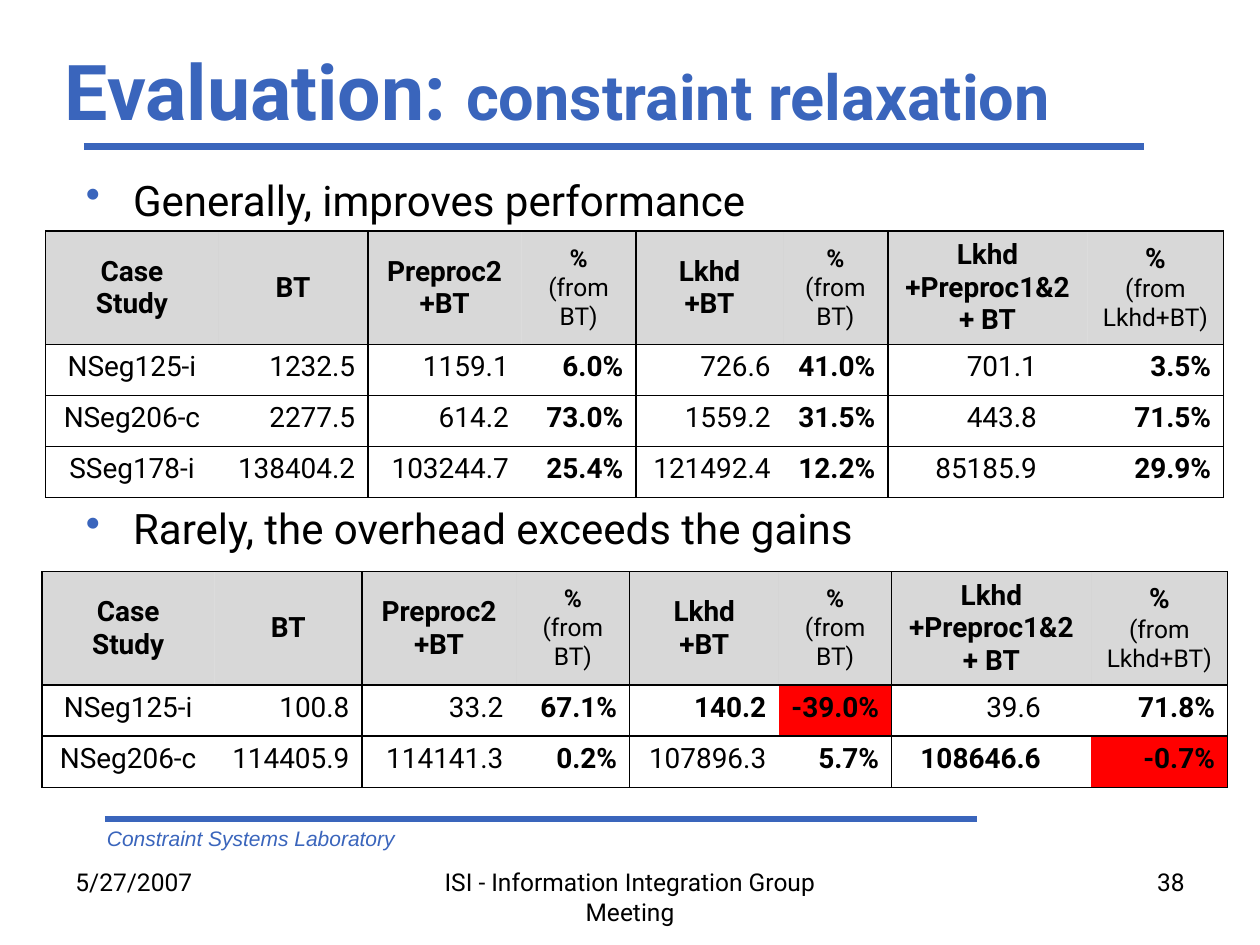
from dataclasses import dataclass

from lxml.etree import SubElement
from pptx import Presentation
from pptx.dml.color import RGBColor
from pptx.enum.shapes import MSO_CONNECTOR
from pptx.enum.text import MSO_ANCHOR, PP_ALIGN
from pptx.oxml.ns import qn
from pptx.util import Pt

HUES = {"blue": "3A65BC", "black": "000000", "grey": "B2B2B2", "red": "FF0000"}
LEFT, MID, RIGHT = PP_ALIGN.LEFT, PP_ALIGN.CENTER, PP_ALIGN.RIGHT
TALL, SHORT = 60, 29.2
HEADS = (
    ("Case", "Study"), ("BT",), ("Preproc2", "+BT"), ("%", "(from BT)"),
    ("Lkhd", "+BT"), ("%", "(from BT)"), ("Lkhd", "+Preproc1&2", "+ BT"),
    ("%", "(from Lkhd+BT)"),
)


@dataclass(frozen=True)
class Grid:
    left: float
    top: float
    cols: tuple[float, ...]
    rows: tuple[tuple[str, ...], ...]
    bold: tuple[str, ...] = ()


@dataclass(frozen=True)
class Rule:
    start: float
    end: float
    top: float


@dataclass(frozen=True)
class Note:
    text: str
    left: float
    top: float
    width: float
    height: float
    align: PP_ALIGN = LEFT
    size: float = 14
    font: str = "Roboto"
    hue: str = "black"
    italic: bool = False


RULES = (Rule(48, 654, 84), Rule(60, 558, 468))
NOTES = (
    Note("Constraint Systems Laboratory", 54, 468, 378, 21.6,
         size=12, font="Arial", hue="blue", italic=True),
    Note("5/27/2007", 36, 492, 168, 37.5),
    Note("ISI - Information Integration Group Meeting", 246, 492, 228, 37.5, MID),
    Note("38", 516, 492, 168, 37.5, RIGHT),
)
GRIDS = (
    Grid(26.2, 132, (98.5, 85.5, 87.8, 65.4, 84.2, 59.8, 114, 78), (
        ("NSeg125-i", "1232.5", "1159.1", "6.0%", "726.6", "41.0%", "701.1", "3.5%"),
        ("NSeg206-c", "2277.5", "614.2", "73.0%", "1559.2", "31.5%", "443.8", "71.5%"),
        ("SSeg178-i", "138404.2", "103244.7", "25.4%", "121492.4", "12.2%",
         "85185.9", "29.9%"),
    )),
    Grid(24, 326.6, (98.5, 84.4, 88, 65, 85.2, 64.5, 114, 78), (
        ("NSeg125-i", "100.8", "33.2", "67.1%", "140.2", "-39.0%", "39.6", "71.8%"),
        ("NSeg206-c", "114405.9", "114141.3", "0.2%", "107896.3", "5.7%",
         "108646.6", "-0.7%"),
    ), ("140.2", "108646.6")),
)


def write(para, text: str, *, size: float = 16, font: str = "Roboto",
          hue: str = "black", bold: bool = False, italic: bool = False,
          align: PP_ALIGN = LEFT) -> None:
    """Add a formatted run to a paragraph."""
    para.alignment = align
    run = para.add_run()
    run.text = text
    face = run.font
    face.size, face.name, face.bold, face.italic = Pt(size), font, bold, italic
    face.color.rgb = RGBColor.from_string(HUES[hue])


def frame(slide, left: float, top: float, width: float, height: float):
    """Add a wrapping text box and return its frame."""
    box = slide.shapes.add_textbox(Pt(left), Pt(top), Pt(width), Pt(height))
    box.text_frame.word_wrap = True
    return box.text_frame


def draw_rule(slide, rule: Rule) -> None:
    """Draw a horizontal blue rule."""
    line = slide.shapes.add_connector(
        MSO_CONNECTOR.STRAIGHT, Pt(rule.start), Pt(rule.top), Pt(rule.end), Pt(rule.top))
    line.line.width = Pt(4)
    line.line.color.rgb = RGBColor.from_string(HUES["blue"])
    SubElement(line._element.spPr, qn("a:effectLst"))


def draw_note(slide, note: Note) -> None:
    """Draw a single line of footer text."""
    body = frame(slide, note.left, note.top, note.width, note.height)
    write(body.paragraphs[0], note.text, size=note.size, font=note.font,
          hue=note.hue, italic=note.italic, align=note.align)


def draw_points(slide, points: tuple[str, ...], gap: float) -> None:
    """Draw bulleted points with a wide gap between them."""
    body = frame(slide, 42, 96, 642, 356)
    for num, point in enumerate(points):
        para = body.add_paragraph() if num else body.paragraphs[0]
        props = para._p.get_or_add_pPr()
        props.set("marL", str(Pt(27)))
        props.set("indent", str(-Pt(27)))
        tint = SubElement(props, qn("a:buClr"))
        SubElement(tint, qn("a:srgbClr"), val=HUES["blue"])
        SubElement(props, qn("a:buChar"), char="•")
        para.space_before = Pt(gap if num else 0)
        write(para, point, size=24)


def edge(cell, col: int, last: int) -> None:
    """Rule a cell above and below, and around each pair of columns."""
    props = cell._tc.get_or_add_tcPr()
    sides = {"L": col % 2 == 0, "R": col % 2 == 1 or col == last, "T": True, "B": True}
    for side, shown in sides.items():
        wide = 1 if side in "LR" and 0 < col < last else 0.75
        line = SubElement(props, qn(f"a:ln{side}"), w=str(Pt(wide)))
        fill = SubElement(line, qn("a:solidFill" if shown else "a:noFill"))
        if shown:
            SubElement(fill, qn("a:srgbClr"), val=HUES["black"])


def paint(cell, hue: str, alpha: int = 100) -> None:
    """Fill a cell with a colour at a given opacity in percent."""
    cell.fill.solid()
    cell.fill.fore_color.rgb = RGBColor.from_string(HUES[hue])
    if alpha < 100:
        tint = cell._tc.tcPr.find(qn("a:solidFill"))[0]
        SubElement(tint, qn("a:alpha"), val=str(alpha * 1000))


def head_cell(cell, lines: tuple[str, ...], last: bool) -> None:
    """Fill in a heading cell."""
    paint(cell, "grey", 50)
    cell.vertical_anchor = MSO_ANCHOR.MIDDLE
    ratio = lines[0] == "%"
    for num, text in enumerate(lines):
        para = cell.text_frame.add_paragraph() if num else cell.text_frame.paragraphs[0]
        small = ratio and (num or not last)
        write(para, text, size=14 if small else 16, bold=not (ratio and num), align=MID)


def data_cell(cell, text: str, col: int, bold: bool) -> None:
    """Fill in a value cell, with losses in red."""
    if text.startswith("-"):
        paint(cell, "red")
    else:
        cell.fill.background()
    if col == 6:
        cell.margin_right = Pt(28.8)
    write(cell.text_frame.paragraphs[0], text, bold=bold or text.endswith("%"),
          align=RIGHT if col else MID)


def draw_grid(slide, grid: Grid) -> None:
    """Draw a table of results."""
    highs = [TALL] + [SHORT] * len(grid.rows)
    table = slide.shapes.add_table(
        len(highs), len(grid.cols), Pt(grid.left), Pt(grid.top),
        Pt(sum(grid.cols)), Pt(sum(highs))).table
    table.first_row = table.horz_banding = False
    for col, wide in zip(table.columns, grid.cols):
        col.width = Pt(wide)
    last = len(grid.cols) - 1
    for row, high in enumerate(highs):
        table.rows[row].height = Pt(high)
        for col in range(last + 1):
            cell = table.cell(row, col)
            edge(cell, col, last)
            if row:
                text = grid.rows[row - 1][col]
                data_cell(cell, text, col, text in grid.bold)
            else:
                head_cell(cell, HEADS[col], col == last)


def main() -> None:
    """Build the slide and save it."""
    deck = Presentation()
    deck.slide_width, deck.slide_height = Pt(720), Pt(540)
    slide = deck.slides.add_slide(deck.slide_layouts[6])
    for rule in RULES:
        draw_rule(slide, rule)
    title = frame(slide, 30, 24, 648, 54)
    title.vertical_anchor = MSO_ANCHOR.MIDDLE
    for text, size in (("Evaluation: ", 44), ("constraint relaxation", 36)):
        write(title.paragraphs[0], text, size=size, hue="blue", bold=True)
    draw_points(slide, ("Generally, improves performance",
                        "Rarely, the overhead exceeds the gains"), 159)
    for note in NOTES:
        draw_note(slide, note)
    for grid in GRIDS:
        draw_grid(slide, grid)
    deck.save("out.pptx")


if __name__ == "__main__":
    main()
